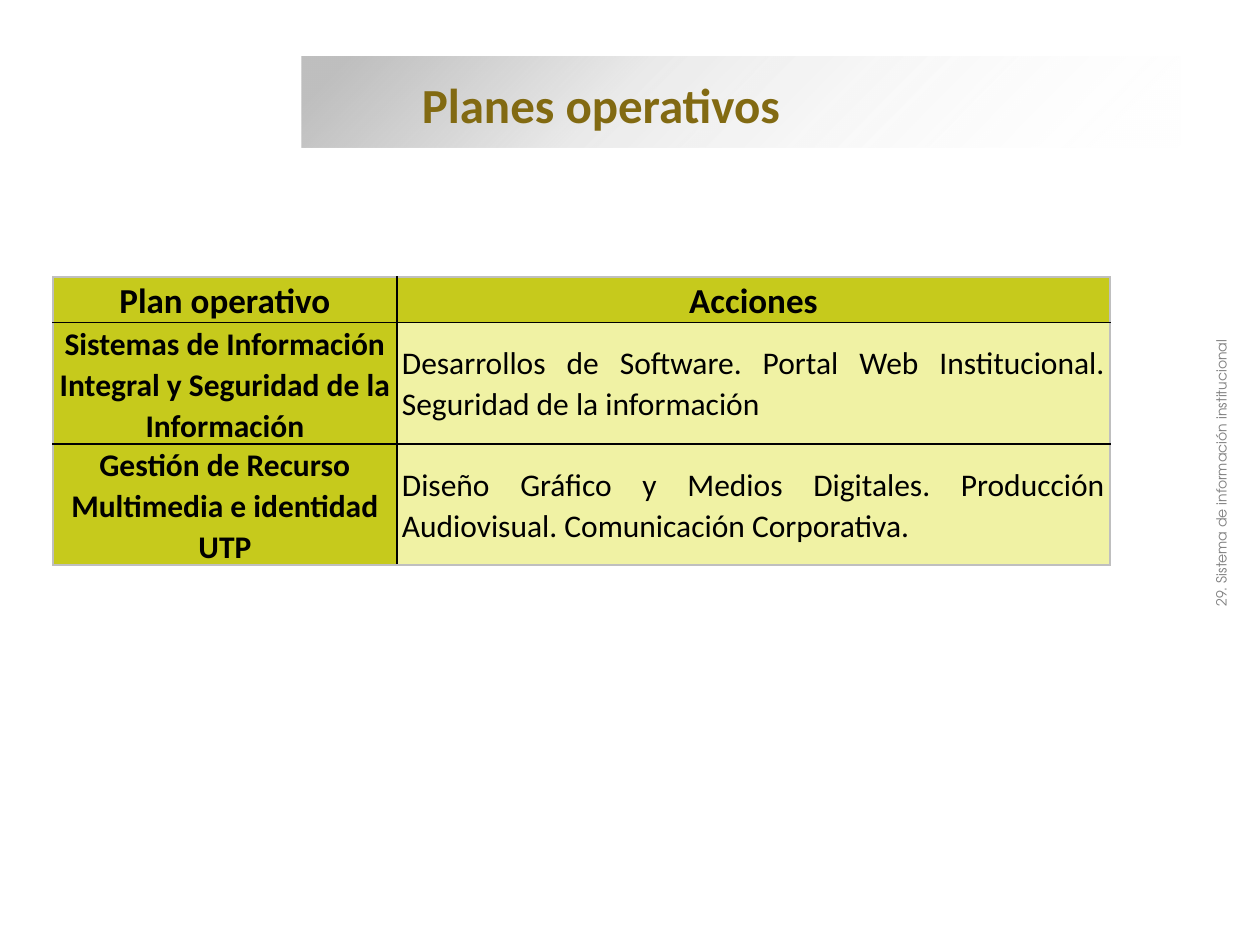
from copy import deepcopy
from dataclasses import dataclass

from lxml.etree import SubElement
from pptx import Presentation
from pptx.dml.color import RGBColor
from pptx.enum.shapes import MSO_SHAPE as Shape
from pptx.enum.text import MSO_ANCHOR as Anchor, PP_ALIGN as Align
from pptx.oxml.ns import qn
from pptx.util import Inches, Pt


@dataclass(frozen=True)
class Theme:
    """Colours, fonts and type sizes of the slide."""
    title: str = "826A12"
    text: str = "000000"
    side: str = "808080"
    edge: str = "BFBFBF"
    olive: str = "C6CA1C"
    pale: str = "F0F2A4"
    banner: tuple = ((0.05, "BFBFBF", 100), (0.37, "BFBFBF", 31), (1, "FFFFFF", 0))
    body_font: str = "Calibri"
    side_font: str = "TeX Gyre Adventor"
    title_size: int = 28
    header_size: int = 20
    cell_size: int = 18
    side_size: int = 8


THEME = Theme()
ROWS = [
    ("Plan operativo", "Acciones"),
    ("Sistemas de Información Integral y Seguridad de la Información",
     "Desarrollos de Software. Portal Web Institucional. Seguridad de la información"),
    ("Gestión de Recurso Multimedia e identidad UTP",
     "Diseño Gráfico y Medios Digitales. Producción Audiovisual. Comunicación Corporativa."),
]


def inches(*lengths):
    """Convert several lengths to Inches."""
    return [Inches(length) for length in lengths]


def write(frame, text, name, size, color, bold=False, align=Align.LEFT):
    """Write one styled paragraph in a text frame and return it."""
    frame.word_wrap = True
    paragraph = frame.paragraphs[0]
    paragraph.text = text
    paragraph.alignment = align
    font = paragraph.font
    font.name, font.size, font.bold = name, Pt(size), bold
    font.color.rgb = RGBColor.from_string(color)
    return paragraph


def add_title(slide, left, top, width, height):
    """Add the fading banner with the slide title on it."""
    banner = slide.shapes.add_shape(Shape.RECTANGLE, *inches(left, top, width, height))
    banner.shadow.inherit = False
    banner.line.fill.background()
    banner.fill.gradient()
    banner.fill.gradient_angle = 315
    stop_list = banner.fill._fill._gradFill.gsLst
    stop_list.append(deepcopy(stop_list[-1]))
    for stop, element, (position, color, opacity) in zip(
            banner.fill.gradient_stops, stop_list, THEME.banner):
        stop.position = position
        stop.color.rgb = RGBColor.from_string(color)
        SubElement(element[0], qn("a:alpha"), val=str(opacity * 1000))
    box = slide.shapes.add_textbox(*inches(left + 0.86, top + 0.09, width - 0.78, 0.57))
    box.text_frame.vertical_anchor = Anchor.MIDDLE
    write(box.text_frame, "Planes operativos", THEME.body_font, THEME.title_size,
          THEME.title, bold=True)


def add_border(cell, side, color):
    """Draw one side of a table cell."""
    properties = cell._tc.get_or_add_tcPr()
    line = SubElement(properties, qn(f"a:ln{side}"), w=str(Pt(1)))
    fill = SubElement(line, qn("a:solidFill"))
    SubElement(fill, qn("a:srgbClr"), val=color)


def add_plans(slide, left, top, width, height):
    """Add the table of plans and their actions."""
    table = slide.shapes.add_table(
        len(ROWS), 2, *inches(left, top, width, height)).table
    table.horz_banding = table.first_row = False
    first_width, header_height = 2.73, 0.36
    row_height = (height - header_height) / (len(ROWS) - 1)
    for column, size in zip(table.columns, (first_width, width - first_width)):
        column.width = Inches(size)
    for y, texts in enumerate(ROWS):
        table.rows[y].height = Inches(row_height if y else header_height)
        for x, text in enumerate(texts):
            cell = table.cell(y, x)
            heading = x == 0 or y == 0
            outer = {"L": x == 0, "R": x == 1, "T": y == 0, "B": y == len(ROWS) - 1}
            for side, is_outer in outer.items():
                add_border(cell, side, THEME.edge if is_outer else THEME.text)
            cell.fill.solid()
            cell.fill.fore_color.rgb = RGBColor.from_string(
                THEME.olive if heading else THEME.pale)
            cell.margin_left = cell.margin_right = Inches(0.04)
            cell.margin_top = cell.margin_bottom = 0
            cell.vertical_anchor = Anchor.MIDDLE
            paragraph = write(
                cell.text_frame, text, THEME.body_font,
                THEME.cell_size if y else THEME.header_size, THEME.text, heading,
                Align.CENTER if heading else Align.JUSTIFY)
            paragraph.line_spacing = 1.07


def add_side_label(slide, left, top, width, height):
    """Add the section name, turned to read upwards."""
    box = slide.shapes.add_textbox(*inches(left, top, width, height))
    box.rotation = 270
    write(box.text_frame, "29. Sistema de información institucional",
          THEME.side_font, THEME.side_size, THEME.side, align=Align.CENTER)


def main():
    """Build the slide and save it."""
    presentation = Presentation()
    presentation.slide_width, presentation.slide_height = inches(10, 7.5)
    slide = presentation.slides.add_slide(presentation.slide_layouts[6])
    add_title(slide, 2.39, 0.45, 6.98, 0.72)
    add_plans(slide, 0.42, 2.2, 8.39, 2.28)
    add_side_label(slide, 7.34, 3.57, 4.84, 0.37)
    presentation.save("out.pptx")


if __name__ == "__main__":
    main()
